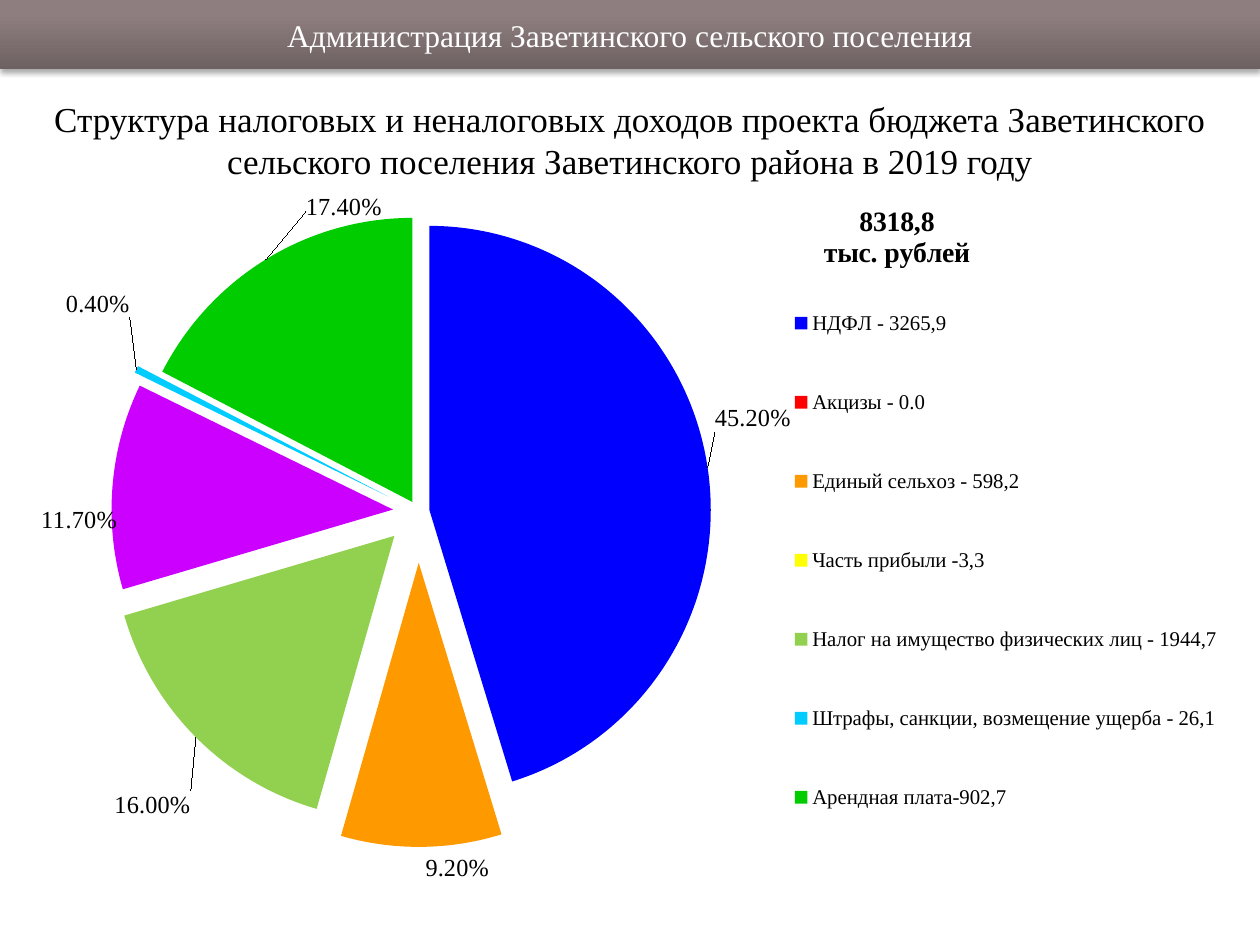
from dataclasses import dataclass

from lxml.etree import SubElement
from pptx import Presentation
from pptx.chart.data import CategoryChartData
from pptx.dml.color import RGBColor
from pptx.enum.chart import XL_CHART_TYPE, XL_LABEL_POSITION, XL_LEGEND_POSITION
from pptx.enum.shapes import MSO_SHAPE
from pptx.enum.text import MSO_ANCHOR, PP_ALIGN
from pptx.oxml import parse_xml
from pptx.oxml.ns import nsdecls, qn
from pptx.util import Emu, Pt


@dataclass(frozen=True)
class Theme:
    font: str = "Times New Roman"
    text: str = "000000"
    banner_text: str = "FFFFFF"
    banner_stops: tuple = ((0, "6E6162"), (80, "8E7E7F"), (100, "8F7E80"))
    banner_size: int = 18
    title_size: int = 20
    total_size: int = 16
    label_size: int = 14
    legend_size: int = 12


THEME = Theme()
PX_PER_INCH = 126

# name, share, colour, explosion in percent, label shift (share of chart size)
# A slice without a name has no place in the legend.
INCOME = [
    ("НДФЛ - 3265,9", 0.452, "0000FF", 4, (0, -0.05)),
    ("Акцизы - 0.0", 0, "FF0000", 0, None),
    ("Единый сельхоз - 598,2", 0.092, "FF9900", 18, (0.03, 0)),
    ("Часть прибыли -3,3", 0, "FFFF00", 0, None),
    ("Налог на имущество физических лиц - 1944,7", 0.16, "92D050", 12, (0, 0.07)),
    ("", 0.117, "CC00FF", 9, (0.01, 0.05)),
    ("Штрафы, санкции, возмещение ущерба - 26,1", 0.004, "00CCFF", 12, (0, -0.07)),
    ("Арендная плата-902,7", 0.174, "00CC00", 4, (0.1, -0.06)),
]


def px(length):
    return Emu(round(length * 914400 / PX_PER_INCH))


def style_font(font, size, color=THEME.text, bold=False):
    font.name = THEME.font
    font.size = Pt(size)
    font.bold = bold
    font.color.rgb = RGBColor.from_string(color)


def write_centered(shape, text, size, color):
    frame = shape.text_frame
    frame.word_wrap = True
    frame.vertical_anchor = MSO_ANCHOR.MIDDLE
    frame.text = text
    para = frame.paragraphs[0]
    para.alignment = PP_ALIGN.CENTER
    style_font(para.font, size, color)


def add_banner(page, box, text):
    banner = page.shapes.add_shape(MSO_SHAPE.RECTANGLE, *map(px, box))
    banner.line.fill.background()
    banner.shadow.inherit = False
    properties = banner._element.spPr
    stops = "".join(
        f'<a:gs pos="{position * 1000}"><a:srgbClr val="{color}"/></a:gs>'
        for position, color in THEME.banner_stops
    )
    gradient = parse_xml(
        f'<a:gradFill {nsdecls("a")} rotWithShape="1"><a:gsLst>{stops}</a:gsLst>'
        '<a:lin ang="16200000" scaled="0"/></a:gradFill>'
    )
    properties.find(qn("a:prstGeom")).addnext(gradient)
    properties.find(qn("a:effectLst")).append(parse_xml(
        f'<a:outerShdw {nsdecls("a")} blurRad="39370" dist="22860" dir="5400000" '
        'rotWithShape="0"><a:srgbClr val="000000"><a:alpha val="35000"/>'
        '</a:srgbClr></a:outerShdw>'
    ))
    write_centered(banner, text, THEME.banner_size, THEME.banner_text)


def place_title(page, box, text):
    title = page.shapes.title
    title.left, title.top, title.width, title.height = map(px, box)
    write_centered(title, text, THEME.title_size, THEME.text)


def make_layout(x, y, width=None, height=None, edge=True, inner=False):
    """Return a c:layout; without edge, x and y shift the default place."""
    layout = parse_xml(f'<c:layout {nsdecls("c")}><c:manualLayout/></c:layout>')
    settings = [("layoutTarget", "inner")] if inner else []
    if edge:
        settings += [("xMode", "edge"), ("yMode", "edge")]
    settings += [("x", x), ("y", y)]
    if width is not None:
        settings += [("w", width), ("h", height)]
    for name, value in settings:
        SubElement(layout[0], qn(f"c:{name}")).set("val", str(value))
    return layout


def set_layout(parent, layout, after):
    for old in parent.findall(qn("c:layout")):
        parent.remove(old)
    if after is None:
        parent.insert(0, layout)
    else:
        parent.find(qn(after)).addnext(layout)


def style_slices(series):
    labels = series.data_labels
    labels.show_value = True
    labels.number_format = "0.00%"
    labels.number_format_is_linked = False
    labels.position = XL_LABEL_POSITION.BEST_FIT
    style_font(labels.font, THEME.label_size)
    for index, (_, _, color, explosion, shift) in enumerate(INCOME):
        point = series.points[index]
        point.format.fill.solid()
        point.format.fill.fore_color.rgb = RGBColor.from_string(color)
        slice_properties = series._element.findall(qn("c:dPt"))[-1].find(qn("c:spPr"))
        slice_properties.addprevious(
            parse_xml(f'<c:explosion {nsdecls("c")} val="{explosion}"/>'))
        label = point.data_label._get_or_add_dLbl()
        if shift is None:
            for child in label[1:]:
                label.remove(child)
            SubElement(label, qn("c:delete")).set("val", "1")
        else:
            style_font(point.data_label.font, THEME.label_size)
            point.data_label.position = XL_LABEL_POSITION.BEST_FIT
            set_layout(label, make_layout(*shift, edge=False), "c:idx")


def add_income_pie(page, box, total_lines):
    data = CategoryChartData(number_format="0.00%")
    data.categories = [row[0] for row in INCOME]
    data.add_series("Series 1", [row[1] for row in INCOME])
    chart = page.shapes.add_chart(XL_CHART_TYPE.PIE, *map(px, box), data).chart
    chart.font.size = Pt(18)
    chart.font.name = "Calibri"
    chart.plots[0].vary_by_categories = True
    style_slices(chart.plots[0].series[0])

    chart.has_title = True
    frame = chart.chart_title.text_frame
    frame.text = "\n".join(total_lines)
    for para in frame.paragraphs:
        para.alignment = PP_ALIGN.CENTER
        style_font(para.font, THEME.total_size, bold=True)
    chart.chart_title.include_in_layout = False

    chart.has_legend = True
    legend = chart.legend
    legend.position = XL_LEGEND_POSITION.RIGHT
    legend.include_in_layout = False
    style_font(legend.font, THEME.legend_size)

    parts = chart._chartSpace.find(qn("c:chart"))
    legend_part = parts.find(qn("c:legend"))
    set_layout(parts.find(qn("c:title")), make_layout(0.65, 0.01), "c:tx")
    set_layout(parts.find(qn("c:plotArea")),
               make_layout(0.01, 0.05, 0.61, 0.82, inner=True), None)
    set_layout(legend_part, make_layout(0.625, 0.09, 0.36, 0.88), "c:legendPos")
    unnamed = [index for index, row in enumerate(INCOME) if not row[0]]
    for index in reversed(unnamed):
        legend_part.find(qn("c:legendPos")).addnext(parse_xml(
            f'<c:legendEntry {nsdecls("c")}><c:idx val="{index}"/>'
            '<c:delete val="1"/></c:legendEntry>'))


def main():
    deck = Presentation()
    deck.slide_width, deck.slide_height = px(1260), px(945)
    page = deck.slides.add_slide(deck.slide_layouts[5])
    place_title(page, (0, 88, 1260, 102),
                "Структура налоговых и неналоговых доходов проекта бюджета Заветинского "
                "сельского поселения Заветинского района в 2019 году")
    add_banner(page, (0, 0, 1260, 69), "Администрация Заветинского сельского поселения")
    add_income_pie(page, (29, 193, 1211, 693), ("8318,8", "тыс. рублей"))
    deck.save("out.pptx")


if __name__ == "__main__":
    main()
